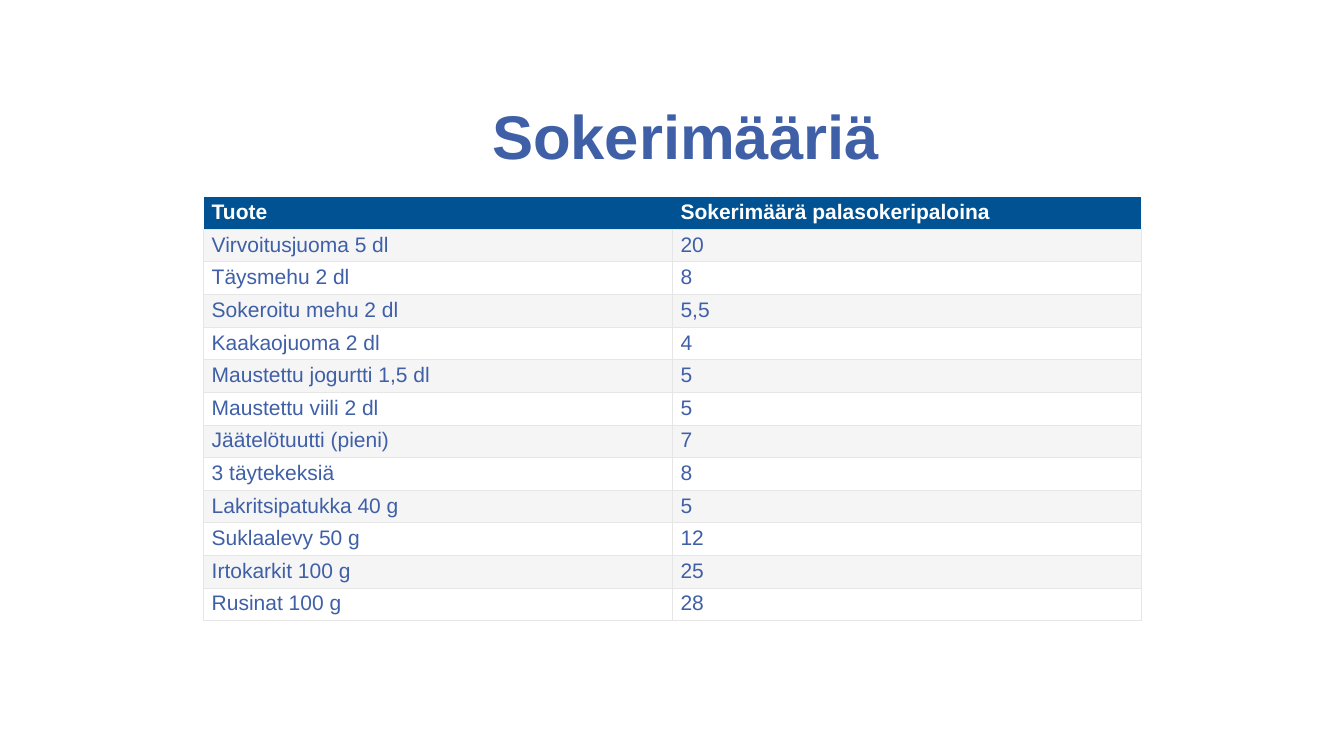
from lxml import etree
from pptx import Presentation
from pptx.dml.color import RGBColor
from pptx.enum.text import MSO_ANCHOR, PP_ALIGN
from pptx.oxml.ns import qn
from pptx.util import Inches, Pt

LEFT = PP_ALIGN.LEFT
MIDDLE = MSO_ANCHOR.MIDDLE
TOP = MSO_ANCHOR.TOP

INK = RGBColor(0x3F, 0x5F, 0xA7)
HEADER = RGBColor(0x00, 0x52, 0x93)
WHITE = RGBColor(0xFF, 0xFF, 0xFF)
BAND = RGBColor(0xF5, 0xF5, 0xF5)
RULE = RGBColor(0xE6, 0xE6, 0xE6)

TITLE_ONLY = 5
SIDES = ("lnL", "lnR", "lnT", "lnB")

SUGAR_AMOUNTS = [
    ("Tuote", "Sokerimäärä palasokeripaloina"),
    ("Virvoitusjuoma 5 dl", "20"),
    ("Täysmehu 2 dl", "8"),
    ("Sokeroitu mehu 2 dl", "5,5"),
    ("Kaakaojuoma 2 dl", "4"),
    ("Maustettu jogurtti 1,5 dl", "5"),
    ("Maustettu viili 2 dl", "5"),
    ("Jäätelötuutti (pieni)", "7"),
    ("3 täytekeksiä", "8"),
    ("Lakritsipatukka 40 g", "5"),
    ("Suklaalevy 50 g", "12"),
    ("Irtokarkit 100 g", "25"),
    ("Rusinat 100 g", "28"),
]


class SlideBuilder:
    font_name = "Arial"

    def __init__(self, slide):
        self.slide = slide

    def style(self, paragraph, size, color, bold):
        paragraph.alignment = LEFT
        font = paragraph.font
        font.name = self.font_name
        font.size = Pt(size)
        font.bold = bold
        font.color.rgb = color

    def title(self, text, left, top, width, height, indent):
        heading = self.slide.shapes.title
        heading.left, heading.top = Inches(left), Inches(top)
        heading.width, heading.height = Inches(width), Inches(height)
        frame = heading.text_frame
        frame.text = text
        frame.word_wrap = True
        frame.vertical_anchor = MIDDLE
        frame.margin_left = Inches(indent)
        frame.paragraphs[0].line_spacing = 0.9
        self.style(frame.paragraphs[0], 44, INK, True)

    def borders(self, cell, visible):
        """Draw thin rules on the visible sides and clear the others."""
        properties = cell._tc.get_or_add_tcPr()
        for position, side in enumerate(SIDES):
            line = etree.Element(qn(f"a:{side}"), w=str(Pt(0.5)))
            if side in visible:
                fill = etree.SubElement(line, qn("a:solidFill"))
                etree.SubElement(fill, qn("a:srgbClr"), val=str(RULE))
            else:
                etree.SubElement(line, qn("a:noFill"))
            properties.insert(position, line)

    def cell(self, cell, text, fill, color, bold, visible):
        cell.text = text
        cell.margin_left = cell.margin_right = Inches(0.08)
        cell.margin_top = cell.margin_bottom = Inches(0.04)
        cell.vertical_anchor = TOP
        cell.fill.solid()
        cell.fill.fore_color.rgb = fill
        self.style(cell.text_frame.paragraphs[0], 15, color, bold)
        self.borders(cell, visible)

    def table(self, rows, left, top, width, height):
        table = self.slide.shapes.add_table(
            len(rows), len(rows[0]),
            Inches(left), Inches(top), Inches(width), Inches(height)).table
        table.horz_banding = False
        for r, row in enumerate(rows):
            if r == 0:
                look = (HEADER, WHITE, True, ("lnB",))
            else:
                look = (BAND if r % 2 else WHITE, INK, False, SIDES)
            for c, text in enumerate(row):
                self.cell(table.cell(r, c), text, *look)


def main():
    deck = Presentation()
    deck.slide_width, deck.slide_height = Inches(13.33), Inches(7.5)
    builder = SlideBuilder(deck.slides.add_slide(deck.slide_layouts[TITLE_ONLY]))
    builder.title("Sokerimääriä", 0.92, 0.91, 11.5, 0.94, indent=3.96)
    builder.table(SUGAR_AMOUNTS, 2.02, 1.95, 9.3, 4.21)
    deck.save("out.pptx")


if __name__ == "__main__":
    main()
